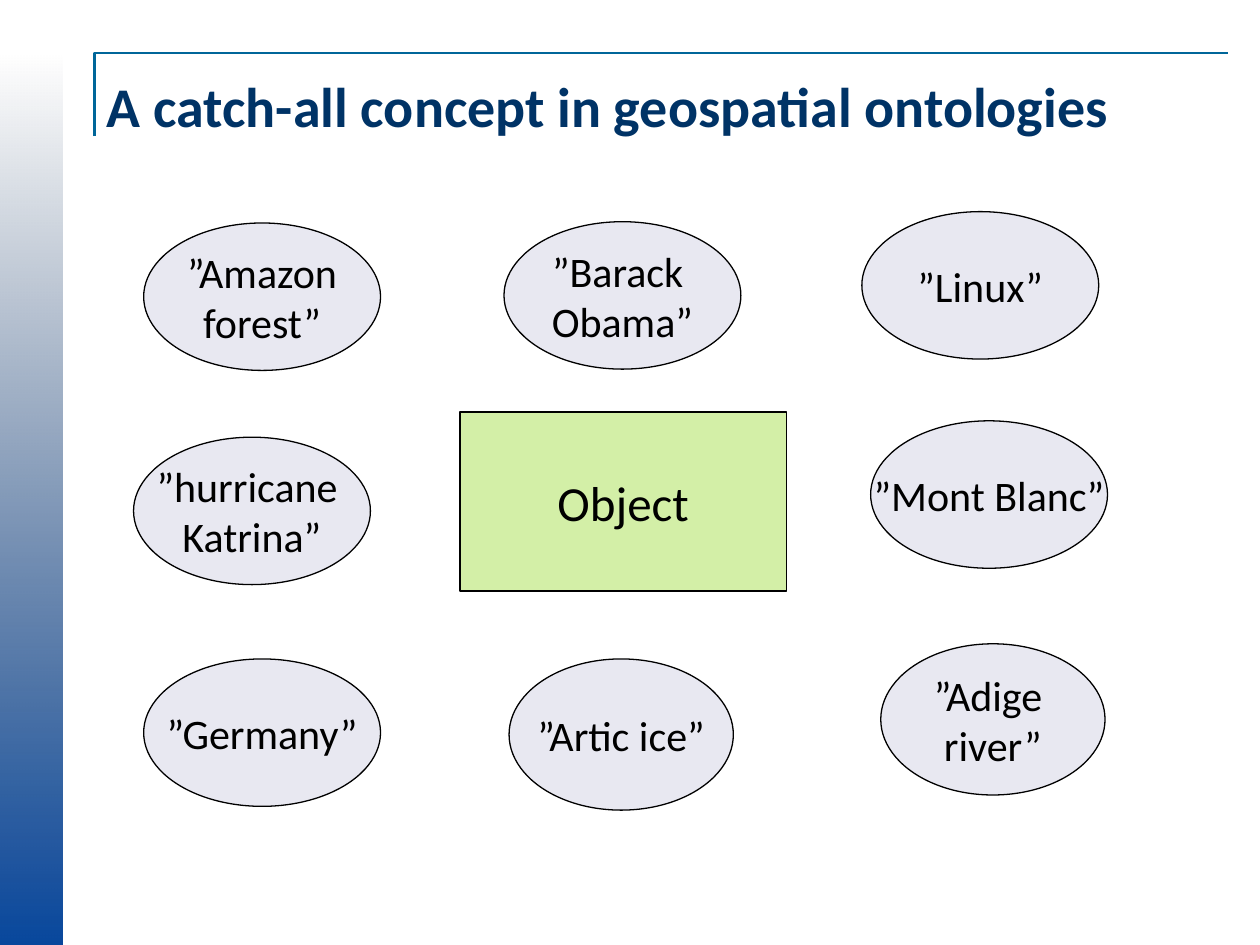
from dataclasses import dataclass

from lxml import etree
from pptx import Presentation
from pptx.dml.color import RGBColor
from pptx.enum.shapes import MSO_SHAPE
from pptx.enum.text import MSO_ANCHOR, PP_ALIGN
from pptx.oxml.ns import qn
from pptx.slide import Slide
from pptx.util import Inches, Pt

RECT, OVAL = MSO_SHAPE.RECTANGLE, MSO_SHAPE.OVAL
MIDDLE, CENTER = MSO_ANCHOR.MIDDLE, PP_ALIGN.CENTER
FONT = "Calibri"
BLACK = RGBColor(0x00, 0x00, 0x00)
NAVY = RGBColor(0x00, 0x33, 0x66)
TEAL = RGBColor(0x00, 0x66, 0x99)
BAR_BLUE = RGBColor(0x08, 0x47, 0x9C)
BAR_DARK = RGBColor(0x04, 0x21, 0x48)
GREEN = RGBColor(0xD3, 0xEF, 0xA7)
LAVENDER = RGBColor(0xE8, 0xE8, 0xF1)


@dataclass(frozen=True)
class Node:
    text: str
    x: float
    y: float
    w: float = 1.88
    h: float = 1.17
    shape: MSO_SHAPE = OVAL
    fill: RGBColor = LAVENDER
    size: int = 24


NODES = [
    Node("Object", 3.65, 3.27, 2.59, 1.42, RECT, GREEN, 28),
    Node("”Amazon\nforest”", 1.14, 1.77),
    Node("”Barack \nObama”", 4, 1.76),
    Node("”Linux”", 6.84, 1.68),
    Node("”hurricane \nKatrina”", 1.06, 3.47),
    Node("”Mont Blanc”", 6.91, 3.34),
    Node("”Germany”", 1.14, 5.23),
    Node("”Artic ice”", 4.04, 5.23, 1.78, 1.2),
    Node("”Adige \nriver”", 6.99, 5.11, 1.78, 1.2),
]


def add_side_bar(s: Slide) -> None:
    """Draw the left bar, fading out towards the top."""
    sp = s.shapes.add_shape(RECT, Inches(-3.29), Inches(3.71), Inches(7.08), Inches(0.5))
    sp.rotation = 270
    sp.shadow.inherit = False
    sp.line.fill.background()
    sp.fill.gradient()
    sp.fill.gradient_angle = 0
    for stop, color, position in zip(sp.fill.gradient_stops, (BAR_BLUE, BAR_DARK), (0, 1)):
        stop.color.rgb = color
        stop.position = position
    faded = list(sp.element.spPr.iter(qn("a:srgbClr")))[-1]
    etree.SubElement(faded, qn("a:alpha"), val="0")


def add_title_rule(s: Slide) -> None:
    """Draw the angled rule around the title."""
    builder = s.shapes.build_freeform(Inches(0.75), Inches(1.08))
    corners = [(Inches(0.75), Inches(0.42)), (Inches(9.75), Inches(0.42))]
    builder.add_line_segments(corners, close=False)
    sp = builder.convert_to_shape()
    sp.shadow.inherit = False
    sp.fill.background()
    sp.line.color.rgb = TEAL
    sp.line.width = Pt(1.5)


def add_title(s: Slide, text: str) -> None:
    """Write the slide title."""
    tf = s.shapes.add_textbox(Inches(0.75), Inches(0.42), Inches(8.92), Inches(0.83)).text_frame
    tf.word_wrap = True
    tf.vertical_anchor = MIDDLE
    tf.text = text
    font = tf.paragraphs[0].runs[0].font
    font.name, font.size, font.bold = FONT, Pt(32), True
    font.color.rgb = NAVY


def add_node(s: Slide, node: Node) -> None:
    """Draw one labelled shape."""
    sp = s.shapes.add_shape(
        node.shape, Inches(node.x), Inches(node.y), Inches(node.w), Inches(node.h))
    sp.shadow.inherit = False
    sp.fill.solid()
    sp.fill.fore_color.rgb = node.fill
    sp.line.color.rgb = BLACK
    sp.line.width = Pt(0.75)
    tf = sp.text_frame
    tf.word_wrap = False
    tf.vertical_anchor = MIDDLE
    tf.text = node.text
    for p in tf.paragraphs:
        p.alignment = CENTER
        for r in p.runs:
            r.font.name, r.font.size = FONT, Pt(node.size)
            r.font.color.rgb = BLACK


def main() -> None:
    """Build and save the slide."""
    prs = Presentation()
    prs.slide_width, prs.slide_height = Inches(10), Inches(7.5)
    s = prs.slides.add_slide(prs.slide_layouts[6])
    add_side_bar(s)
    add_title_rule(s)
    add_title(s, "A catch-all concept in geospatial ontologies")
    for node in NODES:
        add_node(s, node)
    prs.save("out.pptx")


if __name__ == "__main__":
    main()
